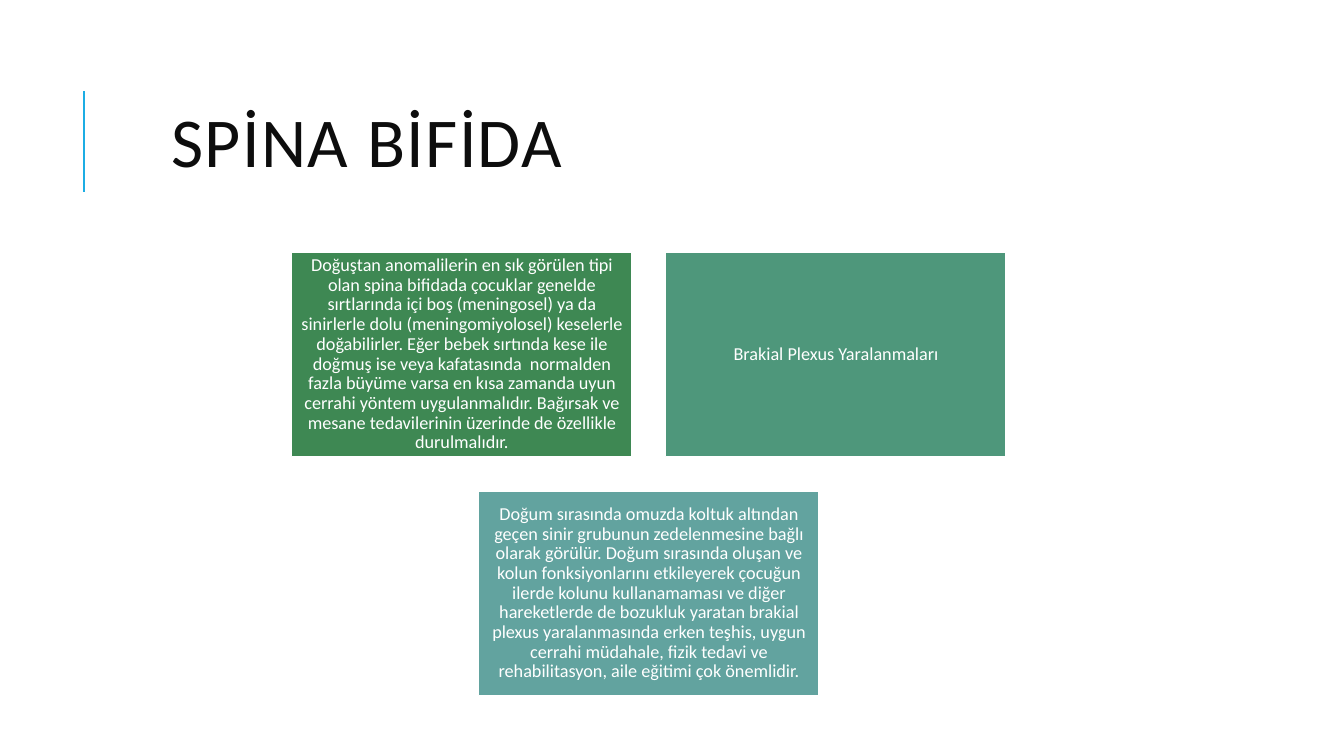
from dataclasses import dataclass

from pptx import Presentation
from pptx import util as u
from pptx.dml.color import RGBColor
from pptx.enum import shapes, text
from pptx.oxml.ns import qn
from lxml import etree

PX = 9144  # EMU per px, 100 px to the inch
FONT = "Calibri"
WIDE, HIGH = 338, 203
LEFT, TOP = 289, 250
STEP_X, STEP_Y = 371, 237


@dataclass
class Card:
    col: float
    row: int
    fill: str
    body: str


CARDS = [
    Card(0, 0, "3E8853",
         "Doğuştan anomalilerin en sık görülen tipi olan spina bifidada "
         "çocuklar genelde sırtlarında içi boş (meningosel) ya da sinirlerle "
         "dolu (meningomiyolosel) keselerle doğabilirler. Eğer bebek sırtında "
         "kese ile doğmuş ise veya kafatasında  normalden fazla büyüme varsa "
         "en kısa zamanda uyun cerrahi yöntem uygulanmalıdır. Bağırsak ve "
         "mesane tedavilerinin üzerinde de özellikle durulmalıdır."),
    Card(1, 0, "4E977B", "Brakial Plexus Yaralanmaları"),
    Card(0.5, 1, "62A39F",
         "Doğum sırasında omuzda koltuk altından geçen sinir grubunun "
         "zedelenmesine bağlı olarak görülür. Doğum sırasında oluşan ve kolun "
         "fonksiyonlarını etkileyerek çocuğun ilerde kolunu kullanamaması ve "
         "diğer hareketlerde de bozukluk yaratan brakial plexus yaralanmasında "
         "erken teşhis, uygun cerrahi müdahale, fizik tedavi ve "
         "rehabilitasyon, aile eğitimi çok önemlidir."),
]


def px(n: float) -> u.Emu:
    return u.Emu(round(n * PX))


def rgb(code: str) -> RGBColor:
    return RGBColor.from_string(code)


def write(frame, body: str, size: int, color: str, lead: float, align):
    """Fill a text frame with one middle-anchored paragraph; return its run."""
    frame.word_wrap = True
    frame.vertical_anchor = text.MSO_ANCHOR.MIDDLE
    para = frame.paragraphs[0]
    para.text = body
    para.alignment = align
    para.line_spacing = lead
    run = para.runs[0]
    run.font.name = FONT
    run.font.size = u.Pt(size)
    run.font.color.rgb = rgb(color)
    return run


def add_rule(slide) -> None:
    rule = slide.shapes.add_connector(
        shapes.MSO_CONNECTOR.STRAIGHT, px(83), px(190), px(83), px(90))
    rule.line.color.rgb = rgb("1CADE4")
    rule.line.width = u.Pt(1.5)
    etree.SubElement(rule._element.spPr, qn("a:effectLst"))


def add_title(slide) -> None:
    box = slide.shapes.add_textbox(px(112), px(64), px(1063), px(164))
    frame = box.text_frame
    frame.margin_left = px(58)
    run = write(frame, "SPİNA BİFİDA", 50, "0D0D0D", 0.8, text.PP_ALIGN.LEFT)
    run.font._element.set("spc", "100")


def add_card(slide, card: Card) -> None:
    box = slide.shapes.add_shape(
        shapes.MSO_SHAPE.RECTANGLE,
        px(LEFT + card.col * STEP_X), px(TOP + card.row * STEP_Y),
        px(WIDE), px(HIGH))
    box.shadow.inherit = False
    box.fill.solid()
    box.fill.fore_color.rgb = rgb(card.fill)
    box.line.color.rgb = rgb("FFFFFF")
    box.line.width = u.Pt(1.25)
    frame = box.text_frame
    frame.margin_left = frame.margin_right = px(5)
    frame.margin_top = frame.margin_bottom = px(5)
    write(frame, card.body, 13, "FFFFFF", 0.9, text.PP_ALIGN.CENTER)


def main() -> None:
    deck = Presentation()
    deck.slide_width, deck.slide_height = px(1333), px(750)
    slide = deck.slides.add_slide(deck.slide_layouts[6])
    add_rule(slide)
    add_title(slide)
    for card in CARDS:
        add_card(slide, card)
    deck.save("out.pptx")


if __name__ == "__main__":
    main()
